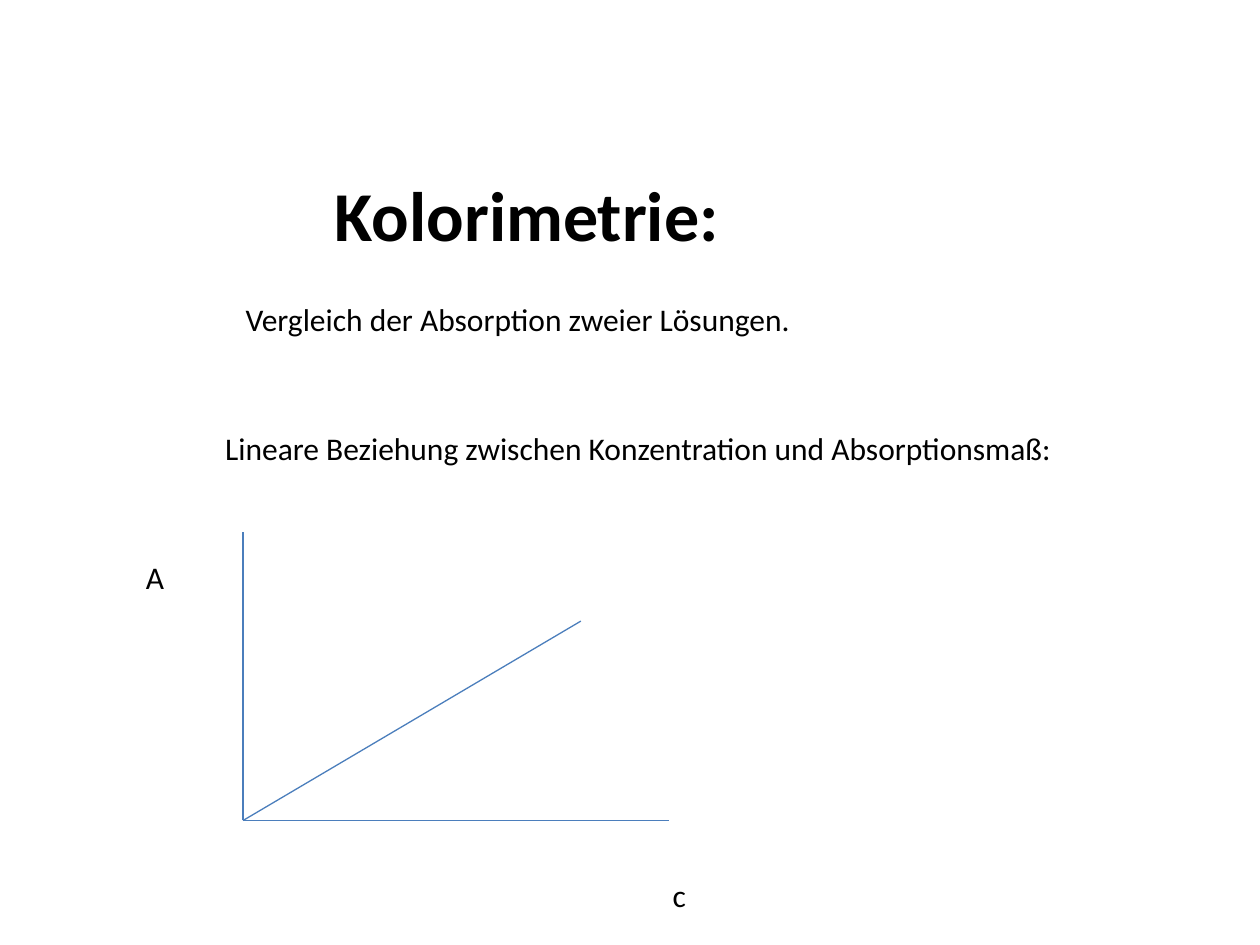
from typing import NamedTuple

from lxml import etree
from pptx import Presentation
from pptx.dml.color import RGBColor
from pptx.enum.shapes import MSO_CONNECTOR
from pptx.enum.text import MSO_AUTO_SIZE
from pptx.oxml.ns import qn
from pptx.slide import Slide
from pptx.util import Cm, Pt

STRAIGHT = MSO_CONNECTOR.STRAIGHT
FIT_TEXT = MSO_AUTO_SIZE.SHAPE_TO_FIT_TEXT
FONT = "Calibri"
COLORS = {"text": "000000", "line": "4B7EBC"}


class Label(NamedTuple):
    text: str
    left: float
    top: float
    width: float
    height: float = 1.02
    size: int = 18
    bold: bool = False


class Point(NamedTuple):
    x: float
    y: float


LABELS = [
    Label("Kolorimetrie:", 6.5, 3.33, 8.33, 1.96, 40, True),
    Label("Vergleich der Absorption zweier Lösungen.", 4.7, 5.92, 11.63),
    Label("Lineare Beziehung zwischen Konzentration und Absorptionsmaß:",
          4.29, 8.53, 17.37, 1.8),
    Label("A", 2.69, 11.13, 0.89),
    Label("c", 13.31, 17.53, 0.79),
]
ORIGIN = Point(4.9, 16.54)
ABSORPTION_END = Point(ORIGIN.x, 10.72)
CONCENTRATION_END = Point(13.49, ORIGIN.y)
CALIBRATION_END = Point(11.71, 12.52)


def add_label(s: Slide, label: Label) -> None:
    sp = s.shapes.add_textbox(Cm(label.left), Cm(label.top),
                              Cm(label.width), Cm(label.height))
    tf = sp.text_frame
    tf.word_wrap = False
    tf.auto_size = FIT_TEXT
    p = tf.paragraphs[0]
    p.text = label.text
    p.font.name = FONT
    p.font.size = Pt(label.size)
    p.font.bold = label.bold
    p.font.color.rgb = RGBColor.from_string(COLORS["text"])


def add_line(s: Slide, start: Point, end: Point) -> None:
    line = s.shapes.add_connector(STRAIGHT, Cm(start.x), Cm(start.y),
                                  Cm(end.x), Cm(end.y))
    line.line.color.rgb = RGBColor.from_string(COLORS["line"])
    line.line.width = Pt(0.75)
    etree.SubElement(line._element.spPr, qn("a:effectLst"))


def main() -> None:
    """Build the colorimetry slide with its calibration diagram."""
    prs = Presentation()
    prs.slide_width, prs.slide_height = Cm(25.4), Cm(19.05)
    s = prs.slides.add_slide(prs.slide_layouts[6])
    for label in LABELS[:3]:
        add_label(s, label)
    for end in (ABSORPTION_END, CONCENTRATION_END, CALIBRATION_END):
        add_line(s, ORIGIN, end)
    for label in LABELS[3:]:
        add_label(s, label)
    prs.save("out.pptx")


if __name__ == "__main__":
    main()
